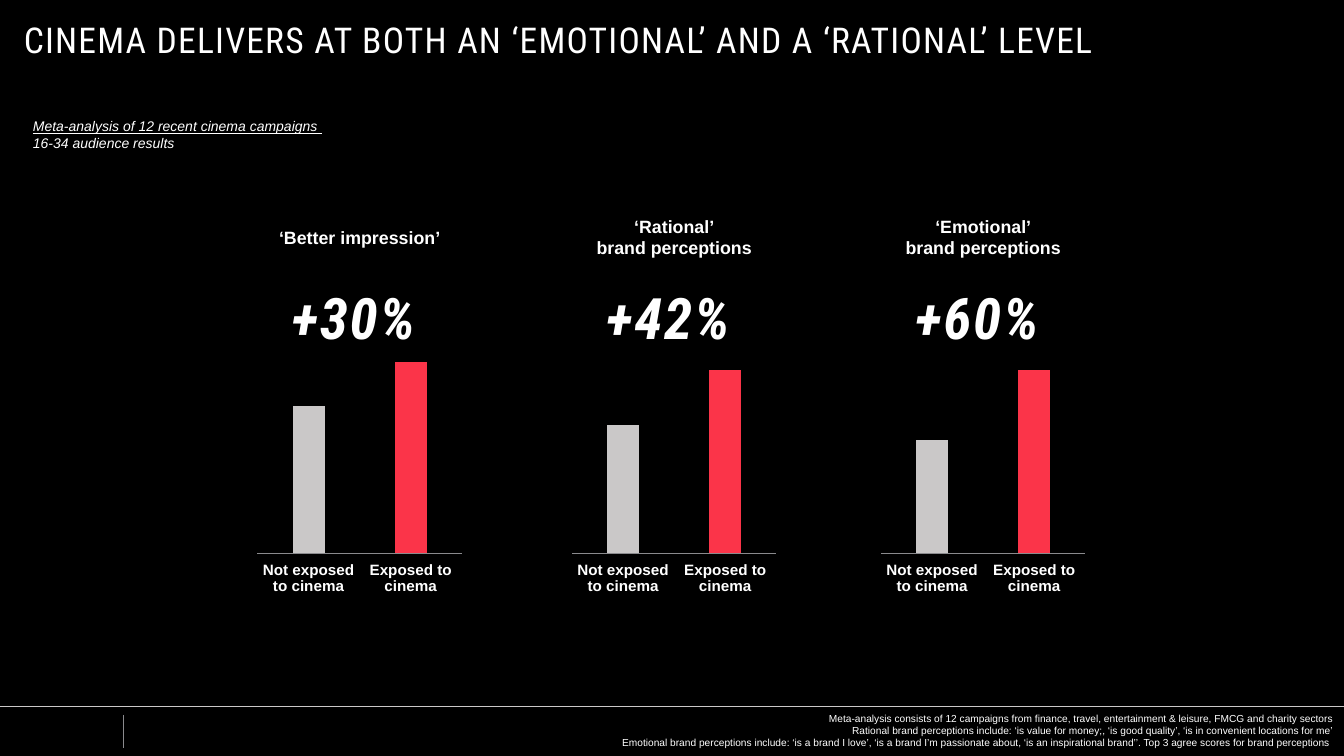
from lxml.etree import SubElement
from pptx import Presentation
from pptx.chart.data import CategoryChartData
from pptx.dml.color import RGBColor
from pptx.enum.chart import XL_CHART_TYPE, XL_TICK_LABEL_POSITION, XL_TICK_MARK
from pptx.enum.shapes import MSO_CONNECTOR
from pptx.enum.text import MSO_ANCHOR, MSO_AUTO_SIZE, PP_ALIGN
from pptx.oxml import parse_xml
from pptx.oxml.ns import nsdecls, qn
from pptx.util import Inches, Pt

COLORS = {
    "background": "000000",
    "text": "FFFFFF",
    "not_exposed": "CAC8C8",
    "exposed": "FB3449",
    "axis": "8A8A8D",
}
CATEGORIES = ["Not exposed to cinema", "Exposed to cinema"]
PANELS = [
    (2.76, ["‘Better impression’"], "+30%", 77, 108),
    (6.2, ["‘Rational’", "brand perceptions"], "+42%", 70, 112.7),
    (9.58, ["‘Emotional’", "brand perceptions"], "+60%", 62, 112.7),
]
SOURCE_NOTES = [
    "Meta-analysis consists of 12 campaigns from finance, travel, entertainment & leisure, "
    "FMCG and charity sectors",
    "Rational brand perceptions include: ‘is value for money;, ‘is good quality’, "
    "‘is in convenient locations for me’",
    "Emotional brand perceptions include: ‘is a brand I love’, ‘is a brand I’m passionate about, "
    "‘is an inspirational brand’’. Top 3 agree scores for brand perceptions ",
]


def color(name):
    """Return a named colour."""
    return RGBColor.from_string(COLORS[name])


def style_font(font, size, name="Arial", bold=False, italic=False):
    """Format a font in the slide's text colour."""
    font.size, font.name = Pt(size), name
    font.bold, font.italic = bold, italic
    font.color.rgb = color("text")


def space_letters(paragraph, points):
    """Widen the letter spacing of a paragraph."""
    for span in paragraph.runs:
        span.font._element.set("spc", str(round(points * 100)))


def add_text(page, box, lines, size, align, name="Arial", bold=False, italic=False):
    """Add a text box with one paragraph for each line."""
    left, top, width, height = box
    frame = page.shapes.add_textbox(
        Inches(left), Inches(top), Inches(width), Inches(height)).text_frame
    frame.word_wrap = True
    frame.margin_left = frame.margin_right = frame.margin_top = frame.margin_bottom = 0
    frame.text = "\n".join(lines)
    for para in frame.paragraphs:
        para.alignment = align
        style_font(para.font, size, name, bold, italic)
    return frame


def add_rule(page, start, end, color_name, width):
    """Draw a straight line without a shadow."""
    rule = page.shapes.add_connector(
        MSO_CONNECTOR.STRAIGHT, *(Inches(value) for value in (*start, *end)))
    rule.line.color.rgb = color(color_name)
    rule.line.width = Pt(width)
    SubElement(rule._element.spPr, qn("a:effectLst"))


def add_title(page, box):
    """Place and format the title placeholder."""
    title = page.shapes.title
    title.left, title.top, title.width, title.height = (Inches(value) for value in box)
    frame = title.text_frame
    frame.margin_left = frame.margin_right = frame.margin_top = frame.margin_bottom = 0
    frame.word_wrap = False
    frame.auto_size = MSO_AUTO_SIZE.NONE
    frame.vertical_anchor = MSO_ANCHOR.MIDDLE
    frame.text = "CINEMA DELIVERS AT BOTH AN ‘EMOTIONAL’ AND A ‘RATIONAL’ LEVEL"
    para = frame.paragraphs[0]
    para.alignment = PP_ALIGN.LEFT
    style_font(para.font, 28, "Roboto Condensed")
    space_letters(para, 1)


def add_subtitle(page, box):
    """Describe the study, with its first line underlined."""
    lines = ["Meta-analysis of 12 recent cinema campaigns ", "16-34 audience results"]
    frame = add_text(page, box, lines, 11, PP_ALIGN.LEFT, italic=True)
    frame.paragraphs[0].font.underline = True


def add_exposure_chart(page, box, not_exposed, maximum):
    """Add a two-column chart of the exposure index."""
    data = CategoryChartData()
    data.categories = CATEGORIES
    data.add_series("Series 1", [not_exposed, 100])
    chart = page.shapes.add_chart(
        XL_CHART_TYPE.COLUMN_CLUSTERED, *(Inches(value) for value in box), data).chart
    chart.has_legend = chart.has_title = False
    style_font(chart.font, 10)

    plot = chart.plots[0]
    plot.gap_width, plot.overlap, plot.vary_by_categories = 219, -27, False
    for index, name in enumerate(["not_exposed", "exposed"]):
        fill = plot.series[0].points[index].format.fill
        fill.solid()
        fill.fore_color.rgb = color(name)

    value_axis = chart.value_axis
    value_axis.minimum_scale, value_axis.maximum_scale = 0, maximum
    value_axis.has_major_gridlines = value_axis.visible = False
    category_axis = chart.category_axis
    category_axis.major_tick_mark = XL_TICK_MARK.NONE
    category_axis.tick_label_position = XL_TICK_LABEL_POSITION.LOW
    category_axis.format.line.color.rgb = color("axis")
    category_axis.format.line.width = Pt(0.75)
    style_font(category_axis.tick_labels.font, 12, bold=True)

    area = chart._chartSpace.chart.plotArea
    for layout in area.findall(qn("c:layout")):
        area.remove(layout)
    sizes = {"x": 0.024, "y": 0.182, "w": 0.951, "h": 0.695}
    area.insert(0, parse_xml(
        f'<c:layout {nsdecls("c")}><c:manualLayout><c:layoutTarget val="inner"/>'
        '<c:xMode val="edge"/><c:yMode val="edge"/>'
        + "".join(f'<c:{key} val="{value}"/>' for key, value in sizes.items())
        + "</c:manualLayout></c:layout>"))


def add_panel(page, box, heading, uplift, not_exposed, maximum):
    """Stack a heading and an uplift figure on a chart."""
    left, top, width, height = box
    add_exposure_chart(page, (left, top + 0.97, width, height - 0.97), not_exposed, maximum)
    frame = add_text(page, (left, top, width, 0.73), heading, 14, PP_ALIGN.CENTER, bold=True)
    frame.vertical_anchor = MSO_ANCHOR.MIDDLE
    frame = add_text(page, (left - 0.07, top + 0.86, width, 1.18), [uplift], 45,
                     PP_ALIGN.CENTER, "Roboto Condensed", True, True)
    space_letters(frame.paragraphs[0], 1.5)


def add_footer(page, box):
    """Add the footer rules and the source notes."""
    left, top, width, height = box
    add_rule(page, (left + 1.35, top + 0.09), (left + 1.35, top + 0.45), "axis", 0.75)
    add_rule(page, (left, top), (left + width, top), "not_exposed", 0.5)
    notes = (left + 3.39, top + 0.06, width - 3.5, height - 0.06)
    add_text(page, notes, SOURCE_NOTES, 8, PP_ALIGN.RIGHT)


def main():
    """Build and save the slide."""
    deck = Presentation()
    deck.slide_width, deck.slide_height = Inches(14.7), Inches(8.27)
    page = deck.slides.add_slide(deck.slide_layouts[5])
    page.background.fill.solid()
    page.background.fill.fore_color.rgb = color("background")
    add_title(page, (0.26, 0.21, 13.58, 0.45))
    add_subtitle(page, (0.36, 1.29, 6.06, 0.37))
    for left, *content in PANELS:
        add_panel(page, (left, 2.23, 2.35, 4.27), *content)
    add_footer(page, (0, 7.73, 14.7, 0.54))
    deck.save("out.pptx")


if __name__ == "__main__":
    main()
